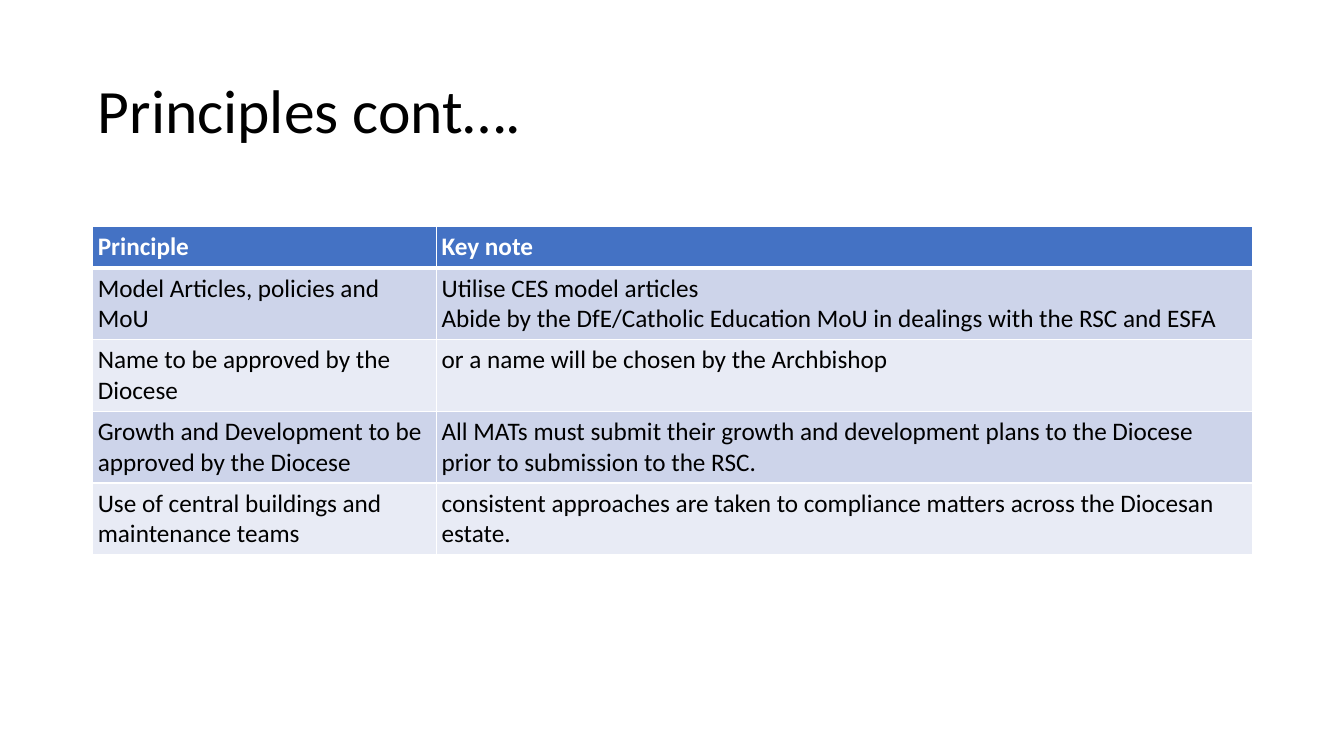
from lxml.etree import SubElement
from pptx import Presentation
from pptx.dml.color import RGBColor
from pptx.enum.text import MSO_ANCHOR, MSO_AUTO_SIZE, PP_ALIGN
from pptx.oxml.ns import qn
from pptx.util import Inches, Pt

# Content
TITLE = "Principles cont…."
ROWS = [
    ("Principle", "Key note"),
    ("Model Articles, policies and MoU",
     "Utilise CES model articles\n"
     "Abide by the DfE/Catholic Education MoU in dealings with the RSC and ESFA"),
    ("Name to be approved by the Diocese",
     "or a name will be chosen by the Archbishop"),
    ("Growth and Development to be approved by the Diocese",
     "All MATs must submit their growth and development plans to the Diocese "
     "prior to submission to the RSC."),
    ("Use of central buildings and maintenance teams",
     "consistent approaches are taken to compliance matters across the Diocesan estate."),
]

# Design
COLORS = {"text": "000000", "white": "FFFFFF", "header": "4472C4",
          "odd": "CDD4EA", "even": "E8EBF5"}
FONT = "Calibri"
SLIDE_WIDTH, SLIDE_HEIGHT = 13.33, 7.5
MARGIN = 0.92
CONTENT_WIDTH = 11.5
TITLE_TOP, TITLE_HEIGHT = 0.4, 1.45
TABLE_TOP = SLIDE_HEIGHT * 0.3
COLUMN_WIDTHS = (3.41, 8.09)
ROW_HEIGHTS = [0.41] + [0.7] * (len(ROWS) - 1)
INSET = Inches(0.05)


def style_font(font, size, color, bold=False):
    font.name, font.size, font.bold = FONT, Pt(size), bold
    font.color.rgb = RGBColor.from_string(COLORS[color])


def set_insets(box):
    box.margin_left = box.margin_right = box.margin_top = box.margin_bottom = INSET


def add_borders(cell, bottom_width, top_width):
    """Draw white cell borders; they must come before the cell's fill."""
    properties = cell._tc.get_or_add_tcPr()
    for side, width in (("L", 1), ("R", 1), ("T", top_width), ("B", bottom_width)):
        line = SubElement(properties, qn(f"a:ln{side}"), w=str(Pt(width)))
        fill = SubElement(line, qn("a:solidFill"))
        SubElement(fill, qn("a:srgbClr"), val=COLORS["white"])


def add_title(slide):
    title = slide.shapes.title
    title.left, title.top = Inches(MARGIN), Inches(TITLE_TOP)
    title.width, title.height = Inches(CONTENT_WIDTH), Inches(TITLE_HEIGHT)
    frame = title.text_frame
    frame.text = TITLE
    frame.word_wrap = True
    frame.auto_size = MSO_AUTO_SIZE.NONE
    frame.vertical_anchor = MSO_ANCHOR.MIDDLE
    set_insets(frame)
    paragraph = frame.paragraphs[0]
    paragraph.alignment = PP_ALIGN.LEFT
    paragraph.line_spacing = 0.9
    style_font(paragraph.runs[0].font, 44, "text")


def add_principles_table(slide):
    table = slide.shapes.add_table(
        len(ROWS), len(COLUMN_WIDTHS), Inches(MARGIN), Inches(TABLE_TOP),
        Inches(CONTENT_WIDTH), Inches(sum(ROW_HEIGHTS))).table
    for column, width in zip(table.columns, COLUMN_WIDTHS):
        column.width = Inches(width)
    for row_index, (texts, height) in enumerate(zip(ROWS, ROW_HEIGHTS)):
        table.rows[row_index].height = Inches(height)
        is_header = row_index == 0
        band = "header" if is_header else ("even", "odd")[row_index % 2]
        for column_index, text in enumerate(texts):
            cell = table.cell(row_index, column_index)
            cell.text_frame.text = text
            set_insets(cell)
            add_borders(cell, 3 if is_header else 1, 3 if row_index == 1 else 1)
            cell.fill.solid()
            cell.fill.fore_color.rgb = RGBColor.from_string(COLORS[band])
            for paragraph in cell.text_frame.paragraphs:
                for run in paragraph.runs:
                    style_font(run.font, 18, "white" if is_header else "text", is_header)


def main():
    presentation = Presentation()
    presentation.slide_width = Inches(SLIDE_WIDTH)
    presentation.slide_height = Inches(SLIDE_HEIGHT)
    slide = presentation.slides.add_slide(presentation.slide_layouts[5])
    add_title(slide)
    add_principles_table(slide)
    presentation.save("out.pptx")


if __name__ == "__main__":
    main()
